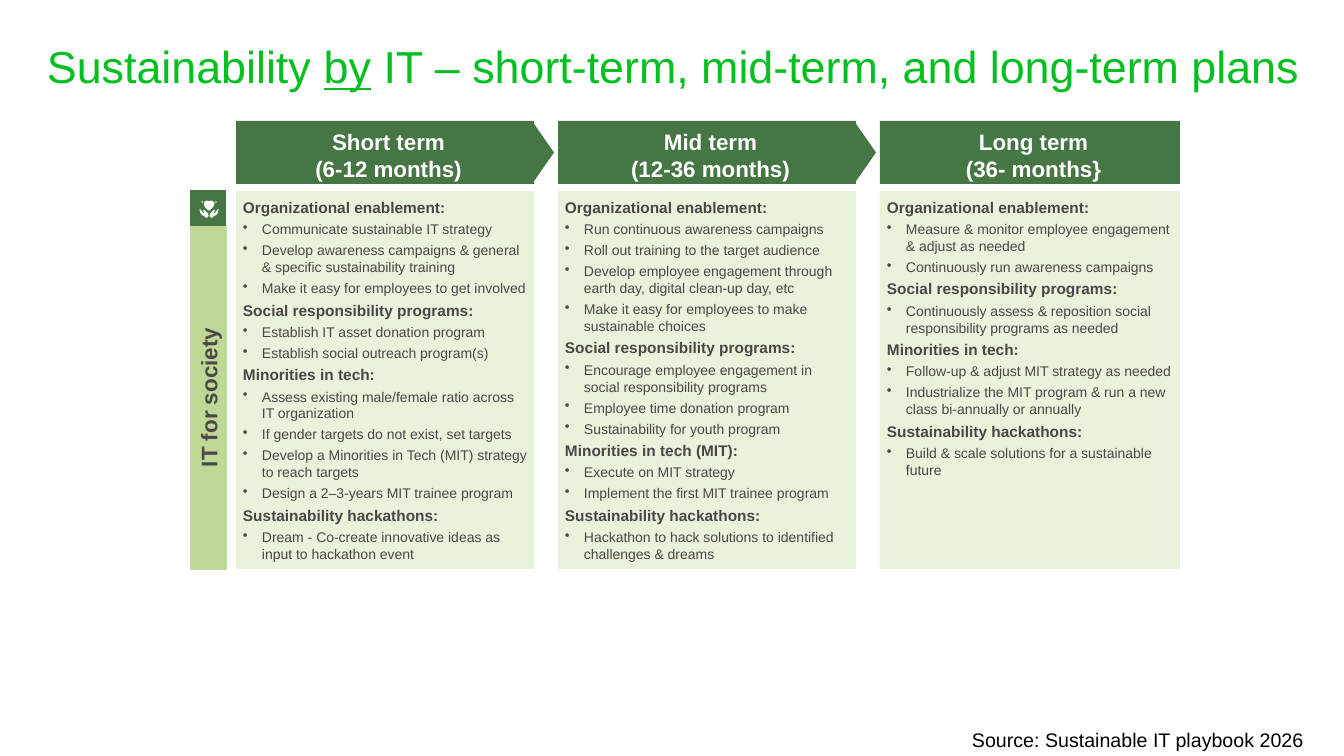
from lxml.etree import SubElement
from pptx import Presentation
from pptx.dml.color import RGBColor
from pptx.enum.shapes import MSO_SHAPE as SHAPE
from pptx.enum.text import MSO_ANCHOR as ANCHOR, MSO_AUTO_SIZE as SIZE, PP_ALIGN as ALIGN
from pptx.oxml.ns import qn
from pptx.util import Inches, Pt

PX = Inches(7.5) / 756

GREEN = RGBColor(0x46, 0x76, 0x43)
PALE = RGBColor(0xE9, 0xF2, 0xDA)
LIME = RGBColor(0xBF, 0xD8, 0x96)
EDGE = RGBColor(0xC1, 0xD9, 0x98)
BRIGHT = RGBColor(0x04, 0xBF, 0x20)
GREY = RGBColor(0x48, 0x48, 0x48)
WHITE = RGBColor(0xFF, 0xFF, 0xFF)
BLACK = RGBColor(0, 0, 0)

ORG = "Organizational enablement:"
SOCIAL = "Social responsibility programs:"
HACK = "Sustainability hackathons:"

PLANS = [
    ("Short term\v(6-12 months)", [
        (ORG, ["Communicate sustainable IT strategy",
               "Develop awareness campaigns & general & specific sustainability training",
               "Make it easy for employees to get involved"]),
        (SOCIAL, ["Establish IT asset donation program",
                  "Establish social outreach program(s)"]),
        ("Minorities in tech:", [
            "Assess existing male/female ratio across IT organization",
            "If gender targets do not exist, set targets",
            "Develop a Minorities in Tech (MIT) strategy to reach targets",
            "Design a 2–3-years MIT trainee program"]),
        (HACK, ["Dream - Co-create innovative ideas as input to hackathon event"]),
    ]),
    ("Mid term\v(12-36 months)", [
        (ORG, ["Run continuous awareness campaigns",
               "Roll out training to the target audience",
               "Develop employee engagement through earth day, digital clean-up day, etc",
               "Make it easy for employees to make sustainable choices"]),
        (SOCIAL, ["Encourage employee engagement in social responsibility programs",
                  "Employee time donation program",
                  "Sustainability for youth program"]),
        ("Minorities in tech (MIT):", ["Execute on MIT strategy",
                                       "Implement the first MIT trainee program"]),
        (HACK, ["Hackathon to hack solutions to identified challenges & dreams"]),
    ]),
    ("Long term\n(36- months}", [
        (ORG, ["Measure & monitor employee engagement & adjust as needed",
               "Continuously run awareness campaigns"]),
        (SOCIAL, ["Continuously assess & reposition social responsibility programs as needed"]),
        ("Minorities in tech:", [
            "Follow-up & adjust MIT strategy as needed",
            "Industrialize the MIT program & run a new class bi-annually or annually"]),
        (HACK, ["Build & scale solutions for a sustainable future"]),
    ]),
]

# Left halves of the icon, in tenths of a px
HEART = [(181, 105), (172, 99), (160, 97), (146, 100), (135, 109), (128, 122),
         (129, 138), (136, 154), (150, 172), (166, 187), (181, 198)]
HAND = [(85, 178), (98, 188), (110, 208), (125, 222), (133, 222), (128, 208),
        (119, 195), (126, 189), (146, 200), (167, 222), (178, 250), (166, 262),
        (157, 270), (136, 255), (109, 240), (92, 214)]
SPARK = [(122, 100), (112, 100), (106, 110), (112, 120), (119, 120), (112, 110)]


def px(*nums):
    return [round(n * PX) for n in nums]


def assign(item, values):
    for name, value in values.items():
        setattr(item, name, value)


def style(font, size, color, **more):
    assign(font, dict(name="Arial", size=Pt(size), **more))
    font.color.rgb = color


def frame(shape, pads, **more):
    """Set the insets (left, top, right, bottom) and other frame values."""
    sides = ("margin_left", "margin_top", "margin_right", "margin_bottom")
    tf = shape.text_frame
    assign(tf, dict(zip(sides, px(*pads)), **more))
    return tf


def block(shapes, kind, box, fill):
    shape = shapes.add_shape(kind, *px(*box))
    shape.shadow.inherit = False
    shape.fill.solid()
    shape.fill.fore_color.rgb = fill
    shape.line.fill.background()
    return shape


def turn(shapes, kind, box, fill, angle):
    """Add a shape that fills the box after a quarter turn."""
    x, y, w, h = box
    shape = block(shapes, kind, (x + (w - h) / 2, y + (h - w) / 2, h, w), fill)
    shape.rotation = angle
    return shape


def border(shape, color, width):
    shape.line.color.rgb = color
    shape.line.width = Pt(width)


def center(tf, text, size, color):
    tf.text = text
    for par in tf.paragraphs:
        par.alignment = ALIGN.CENTER
        for run in par.runs:
            style(run.font, size, color, bold=True)


def entry(par, text, head):
    assign(par, dict(level=1, alignment=ALIGN.LEFT, space_before=Pt(3)))
    run = par.add_run()
    run.text = text
    style(run.font, 11 if head else 10, GREY, bold=head)
    props = par._p.get_or_add_pPr()
    dent = 0 if head else px(19)[0]
    props.set("marL", str(dent))
    props.set("indent", str(-dent))
    if head:
        SubElement(props, qn("a:buNone"))
    else:
        tint = SubElement(props, qn("a:buClr"))
        SubElement(tint, qn("a:srgbClr")).set("val", str(GREY))
        SubElement(props, qn("a:buChar")).set("char", "•")


def column(shapes, box, plan, arrow):
    x, y, w, h = box
    label, parts = plan
    head = block(shapes, SHAPE.RECTANGLE, (x, y, w, 63), GREEN)
    tf = frame(head, (14, 7, 7, 7), word_wrap=True, vertical_anchor=ANCHOR.TOP)
    center(tf, label, 16, WHITE)
    if arrow:
        turn(shapes, SHAPE.ISOSCELES_TRIANGLE, (x + w - 2, y, 22, 63), GREEN, 90)
    body = block(shapes, SHAPE.RECTANGLE, (x, y + 70, w, h - 70), PALE)
    tf = frame(body, (7, 7, 7, 7), word_wrap=True, vertical_anchor=ANCHOR.TOP)
    rows = [row for name, items in parts
            for row in [(name, True)] + [(item, False) for item in items]]
    for i, row in enumerate(rows):
        entry(tf.add_paragraph() if i else tf.paragraphs[0], *row)
    tf.paragraphs[0].space_before = Pt(0)


def flip(points):
    return [(362 - x, y) for x, y in points]


def icon(shapes, box):
    """Draw a heart held by two hands on a square."""
    group = shapes.add_group_shape().shapes
    border(block(group, SHAPE.RECTANGLE, box, GREEN), GREEN, 0.75)
    lines = [HEART + flip(HEART)[::-1], HAND, flip(HAND), SPARK, flip(SPARK)]
    path = group.build_freeform(*lines[0][0], scale=PX / 10)
    for i, points in enumerate(lines):
        if i:
            path.move_to(*points[0])
        path.add_line_segments(points[1:], close=True)
    care = path.convert_to_shape(*px(*box[:2]))
    care.shadow.inherit = False
    care.fill.solid()
    care.fill.fore_color.rgb = WHITE
    care.line.fill.background()


def sidebar(shapes, box):
    x, y, w, h = box
    bar = turn(shapes, SHAPE.RECTANGLE, (x, y + w, w, h - w), LIME, 270)
    border(bar, EDGE, 1.5)
    tf = frame(bar, (5, 2, 5, 2), word_wrap=True, vertical_anchor=ANCHOR.MIDDLE)
    center(tf, "IT for society", 16, GREY)
    icon(shapes, (x, y, w, w))


def place(shape, box):
    assign(shape, dict(zip(("left", "top", "width", "height"), px(*box))))


def heading(title, box):
    place(title, box)
    tf = frame(title, (5, 3, 5, 3), word_wrap=True, vertical_anchor=ANCHOR.TOP,
               auto_size=SIZE.SHAPE_TO_FIT_TEXT)
    par = tf.paragraphs[0]
    assign(par, dict(alignment=ALIGN.LEFT, line_spacing=1.15, space_after=Pt(4)))
    for text in ("Sustainability ", "by", " IT – short-term, mid-term, and long-term plans"):
        run = par.add_run()
        run.text = text
        style(run.font, 32, BRIGHT, underline=text == "by")


def source(shapes, box):
    note = shapes.add_textbox(*px(*box))
    tf = frame(note, (10, 5, 10, 5), word_wrap=False, auto_size=SIZE.SHAPE_TO_FIT_TEXT)
    tf.text = "Source: Sustainable IT playbook 2026"
    style(tf.paragraphs[0].runs[0].font, 14, BLACK)


def main():
    deck = Presentation()
    deck.slide_width, deck.slide_height = px(1344, 756)
    slide = deck.slides.add_slide(deck.slide_layouts[5])
    shapes = slide.shapes
    heading(shapes.title, (42, 28, 1276, 63))
    for i, plan in enumerate(PLANS):
        last = i == len(PLANS) - 1
        column(shapes, (236 + 322 * i, 121, 300 if last else 298, 448), plan, not last)
    sidebar(shapes, (191, 191, 35, 378))
    source(shapes, (962, 723, 367, 34))
    deck.save("out.pptx")


if __name__ == "__main__":
    main()
